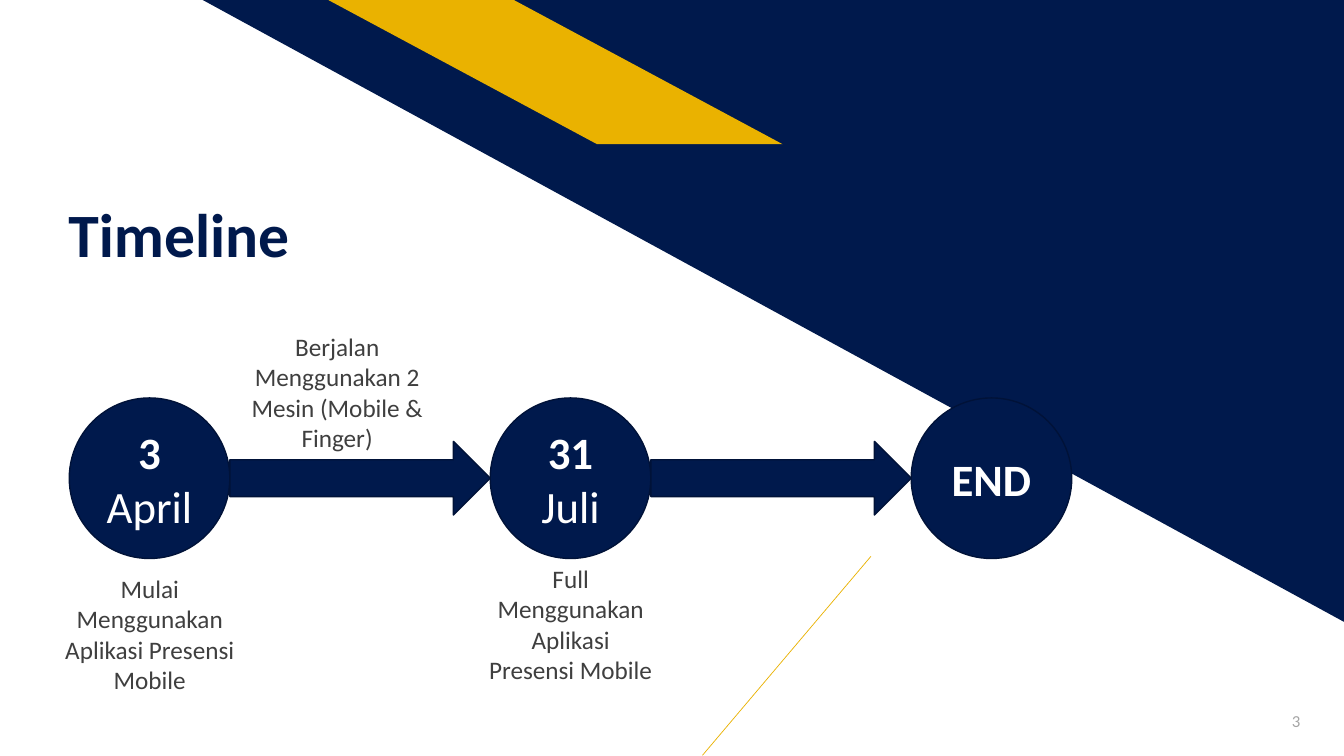
from lxml import etree
from pptx import Presentation
from pptx.dml.color import RGBColor
from pptx.enum import shapes, text
from pptx.oxml.ns import qn
from pptx.util import Pt

COLORS = {"navy": "00194C", "edge": "001238", "gold": "EAB200",
          "white": "FFFFFF", "body": "3F3F3F", "number": "A5A5A5"}
FONT = "Calibri"
TITLE = "Timeline"
PAGE_NUMBER = "3"
MILESTONES = [("3", "April"), ("31", "Juli"), ("END", "")]
CAPTIONS = [
    ("Mulai Menggunakan Aplikasi Presensi Mobile", (29.5, 406, 155, 94.5)),
    ("Berjalan Menggunakan 2 Mesin (Mobile & Finger)", (150.5, 233.3, 180.7, 94.5)),
    ("Full Menggunakan Aplikasi Presensi Mobile", (340.6, 398.9, 134, 94.5)),
]

FIRST_LEFT, CENTER_Y = 49.5, 341.6
DIAMETER, PITCH, ARROW_HEIGHT = 114.7, 300.7, 52.6


def color(name):
    return RGBColor.from_string(COLORS[name])


def add_shape(slide, kind, box, fill, line=None):
    shape = slide.shapes.add_shape(kind, *map(Pt, box))
    shape.shadow.inherit = False
    shape.fill.solid()
    shape.fill.fore_color.rgb = color(fill)
    if line:
        shape.line.color.rgb = color(line)
        shape.line.width = Pt(1)
    else:
        shape.line.fill.background()
    return shape


def style(paragraph, size, ink, align, bold=False):
    paragraph.alignment = align
    font = paragraph.font
    font.name, font.size, font.bold = FONT, Pt(size), bold
    font.color.rgb = color(ink)


def add_text(slide, words, box, size, ink, align, anchor, bold=False):
    frame = slide.shapes.add_textbox(*map(Pt, box)).text_frame
    frame.word_wrap = True
    frame.vertical_anchor = anchor
    paragraph = frame.paragraphs[0]
    paragraph.text = words
    style(paragraph, size, ink, align, bold)
    return frame


def add_backdrop(slide):
    kinds = shapes.MSO_SHAPE
    triangle = add_shape(slide, kinds.RIGHT_TRIANGLE, (144.8, 0, 815.2, 444.2), "navy")
    triangle.rotation = 180
    band = add_shape(slide, kinds.PARALLELOGRAM, (234.5, 0, 324.5, 103), "gold")
    band.adjustments[0] = 1.864
    band._element.spPr.find(qn("a:xfrm")).set("flipH", "1")
    accent = slide.shapes.add_connector(
        shapes.MSO_CONNECTOR.STRAIGHT, Pt(501.8), Pt(539.5), Pt(622.1), Pt(397.4))
    accent.line.color.rgb = color("gold")
    accent.line.width = Pt(0.5)
    etree.SubElement(accent._element.spPr, qn("a:effectLst"))


def add_milestone(slide, left, headline, month):
    box = (left, CENTER_Y - DIAMETER / 2, DIAMETER, DIAMETER)
    circle = add_shape(slide, shapes.MSO_SHAPE.OVAL, box, "navy", "edge")
    circle.text_frame.vertical_anchor = text.MSO_ANCHOR.MIDDLE
    paragraph = circle.text_frame.paragraphs[0]
    style(paragraph, 32, "white", text.PP_ALIGN.CENTER, True)
    paragraph.add_run().text = headline
    if month:
        paragraph.add_line_break()
        run = paragraph.add_run()
        run.text = month
        run.font.bold = False


def main():
    """Build the timeline slide."""
    presentation = Presentation()
    presentation.slide_width, presentation.slide_height = Pt(960), Pt(540)
    slide = presentation.slides.add_slide(presentation.slide_layouts[6])
    align, anchor = text.PP_ALIGN, text.MSO_ANCHOR

    add_backdrop(slide)
    title = add_text(slide, TITLE, (41.8, 97.9, 578.2, 95.8), 44, "navy",
                     align.LEFT, anchor.BOTTOM, True)
    title.margin_bottom = 0
    title.paragraphs[0].line_spacing = 0.9
    add_text(slide, PAGE_NUMBER, (877.7, 500.4, 58.3, 28.8), 12, "number",
             align.RIGHT, anchor.MIDDLE)

    for index, (headline, month) in enumerate(MILESTONES):
        add_milestone(slide, FIRST_LEFT + index * PITCH, headline, month)
    for index in range(len(MILESTONES) - 1):
        left = FIRST_LEFT + index * PITCH + DIAMETER
        add_shape(slide, shapes.MSO_SHAPE.RIGHT_ARROW,
                  (left, CENTER_Y - ARROW_HEIGHT / 2, PITCH - DIAMETER, ARROW_HEIGHT),
                  "navy", "edge")
    for words, box in CAPTIONS:
        add_text(slide, words, box, 18, "body", align.CENTER, anchor.TOP)

    presentation.save("out.pptx")


if __name__ == "__main__":
    main()
